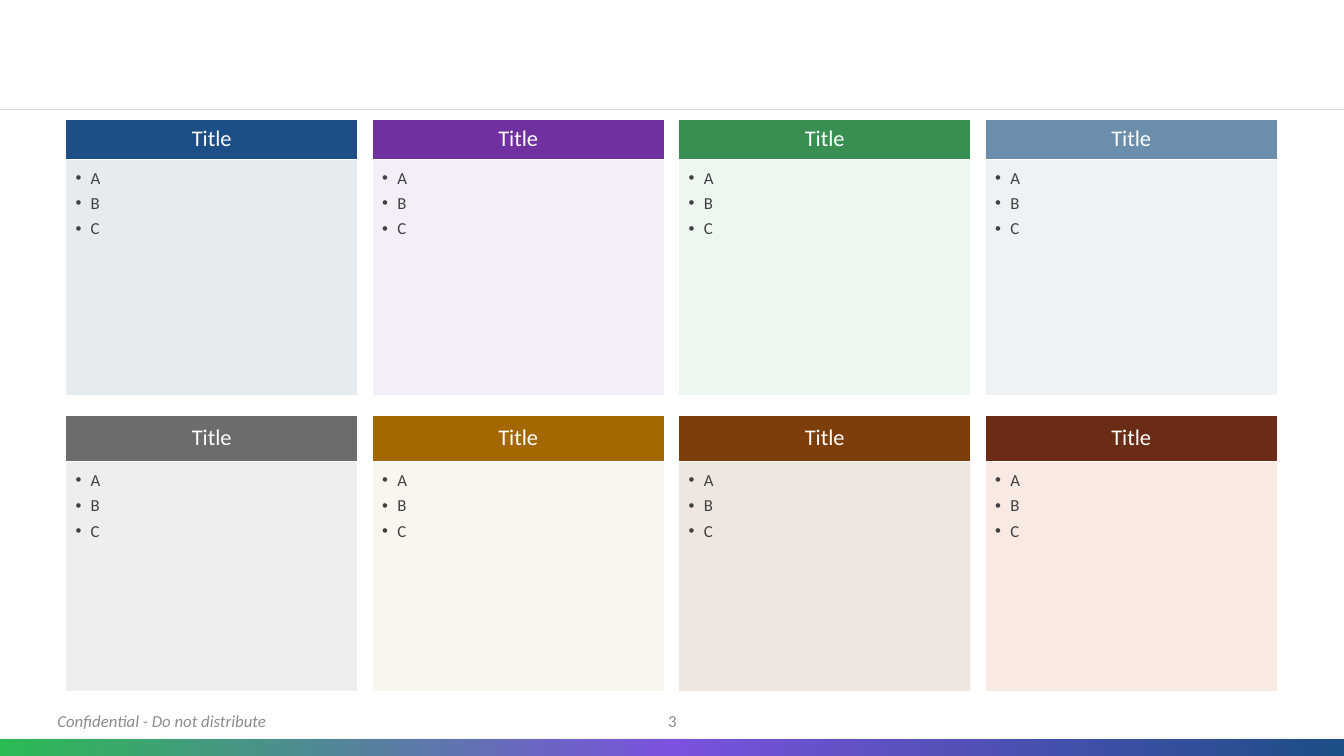
from dataclasses import dataclass

from lxml.etree import SubElement
from pptx import Presentation
from pptx.dml.color import RGBColor
from pptx.enum.shapes import MSO_CONNECTOR, MSO_SHAPE
from pptx.enum.text import MSO_ANCHOR, PP_ALIGN
from pptx.oxml import parse_xml
from pptx.oxml.ns import nsdecls, qn
from pptx.slide import Slide
from pptx.table import _Cell
from pptx.util import Inches, Pt

FONT = "Calibri"
COLORS = {
    "white": "FFFFFF",
    "body": "404040",
    "footer": "8C8C8C",
    "rule": "D9D9D9",
    "bar_left": "2BBA53",
    "bar_middle": "7A52DD",
    "navy": "1D4E87",
    "navy_tint": "CED9E3",
    "purple": "7030A0",
    "green": "398F52",
    "green_tint": "DCF1E2",
    "steel": "6B8EAC",
    "gray": "6C6C6C",
    "gray_tint": "C2C2C2",
    "ochre": "A46802",
    "brown": "7E3E0A",
    "maroon": "6A2C14",
    "maroon_tint": "F7DDD4",
}
SLIDE_W = 13.33
CARD_LEFT, CARD_STEP, CARD_W, CARD_H = 0.65, 3.04, 2.9, 2.74


@dataclass
class Card:
    header: str
    tint: str
    opacity: int  # percent
    title: str = "Title"
    items: tuple[str, ...] = ("A", "B", "C")


@dataclass
class CardRow:
    top: float
    header_h: float
    cards: list[Card]


@dataclass
class FooterText:
    text: str
    left: float
    width: float
    align: PP_ALIGN
    italic: bool


CARD_ROWS = [
    CardRow(1.18, 0.4, [
        Card("navy", "navy_tint", 50),
        Card("purple", "purple", 8),
        Card("green", "green_tint", 50),
        Card("steel", "steel", 11),
    ]),
    CardRow(4.12, 0.46, [
        Card("gray", "gray_tint", 28),
        Card("ochre", "ochre", 6),
        Card("brown", "brown", 13),
        Card("maroon", "maroon_tint", 64),
    ]),
]
FOOTERS = [
    FooterText("3", 6.28, 0.78, PP_ALIGN.CENTER, False),
    FooterText("Confidential - Do not distribute", 0.47, 4.5, PP_ALIGN.LEFT, True),
]


def rgb(name: str) -> RGBColor:
    return RGBColor.from_string(COLORS[name])


def set_font(p, size: int, color: str, italic: bool = False) -> None:
    p.font.name = FONT
    p.font.size = Pt(size)
    p.font.italic = italic
    p.font.color.rgb = rgb(color)


def style_cell(cell: _Cell, color: str, opacity: int = 100) -> None:
    """Fill the cell and give it white borders on all sides."""
    cell.fill.solid()
    cell.fill.fore_color.rgb = rgb(color)
    tc_pr = cell._tc.get_or_add_tcPr()
    if opacity < 100:
        SubElement(tc_pr.find(".//" + qn("a:srgbClr")), qn("a:alpha"), val=str(opacity * 1000))
    for i, side in enumerate(("lnL", "lnR", "lnT", "lnB")):
        tc_pr.insert(i, parse_xml(
            f'<a:{side} {nsdecls("a")} w="{Pt(1)}"><a:solidFill>'
            f'<a:srgbClr val="{COLORS["white"]}"/></a:solidFill></a:{side}>'))


def add_bullet(p) -> None:
    p_pr = p._p.get_or_add_pPr()
    p_pr.set("marL", str(Inches(0.15)))
    p_pr.set("indent", str(Inches(-0.15)))
    SubElement(p_pr, qn("a:buFont"), typeface="Arial")
    SubElement(p_pr, qn("a:buChar"), char="•")


def add_card(s: Slide, card: Card, left: float, top: float, header_h: float) -> None:
    table = s.shapes.add_table(
        2, 1, Inches(left), Inches(top), Inches(CARD_W), Inches(CARD_H)).table
    table.horz_banding = False
    table.rows[0].height = Inches(header_h)
    table.rows[1].height = Inches(CARD_H - header_h)

    header, body = table.cell(0, 0), table.cell(1, 0)
    style_cell(header, card.header)
    header.vertical_anchor = MSO_ANCHOR.MIDDLE
    p = header.text_frame.paragraphs[0]
    p.text = card.title
    p.alignment = PP_ALIGN.CENTER
    p.line_spacing = 0.9
    set_font(p, 16, "white")

    style_cell(body, card.tint, card.opacity)
    body.margin_top = body.margin_bottom = Inches(0.1)
    tf = body.text_frame
    tf.text = "\n".join(card.items)
    for i, p in enumerate(tf.paragraphs):
        add_bullet(p)
        p.line_spacing = 0.9
        if i:
            p.space_before = Pt(5)
        set_font(p, 12, "body")


def add_header_rule(s: Slide) -> None:
    rule = s.shapes.add_connector(
        MSO_CONNECTOR.STRAIGHT, 0, Inches(1.09), Inches(SLIDE_W), Inches(1.09))
    rule.line.color.rgb = rgb("rule")
    rule.line.width = Pt(0.5)
    SubElement(rule._element.spPr, qn("a:effectLst"))


def add_gradient_bar(s: Slide) -> None:
    """Draw the bottom bar, which keeps the soft shadow of the theme."""
    bar = s.shapes.add_shape(
        MSO_SHAPE.RECTANGLE, 0, Inches(7.33), Inches(SLIDE_W), Inches(0.17))
    bar.line.fill.background()
    bar.fill.gradient()
    bar.fill.gradient_angle = 0
    stops = bar._element.spPr.find(".//" + qn("a:gsLst"))
    stops.clear()
    for pos, color in ((0, "bar_left"), (50, "bar_middle"), (100, "navy")):
        stop = SubElement(stops, qn("a:gs"), pos=str(pos * 1000))
        SubElement(stop, qn("a:srgbClr"), val=COLORS[color])


def add_footer(s: Slide, footer: FooterText) -> None:
    tf = s.shapes.add_textbox(
        Inches(footer.left), Inches(6.95), Inches(footer.width), Inches(0.4)).text_frame
    tf.word_wrap = True
    tf.vertical_anchor = MSO_ANCHOR.MIDDLE
    p = tf.paragraphs[0]
    p.text = footer.text
    p.alignment = footer.align
    set_font(p, 12, "footer", footer.italic)


def main() -> None:
    prs = Presentation()
    prs.slide_width, prs.slide_height = Inches(SLIDE_W), Inches(7.5)
    s = prs.slides.add_slide(prs.slide_layouts[6])
    add_header_rule(s)
    add_gradient_bar(s)
    for footer in FOOTERS:
        add_footer(s, footer)
    for row in CARD_ROWS:
        for col, card in enumerate(row.cards):
            add_card(s, card, CARD_LEFT + col * CARD_STEP, row.top, row.header_h)
    prs.save("out.pptx")


if __name__ == "__main__":
    main()
